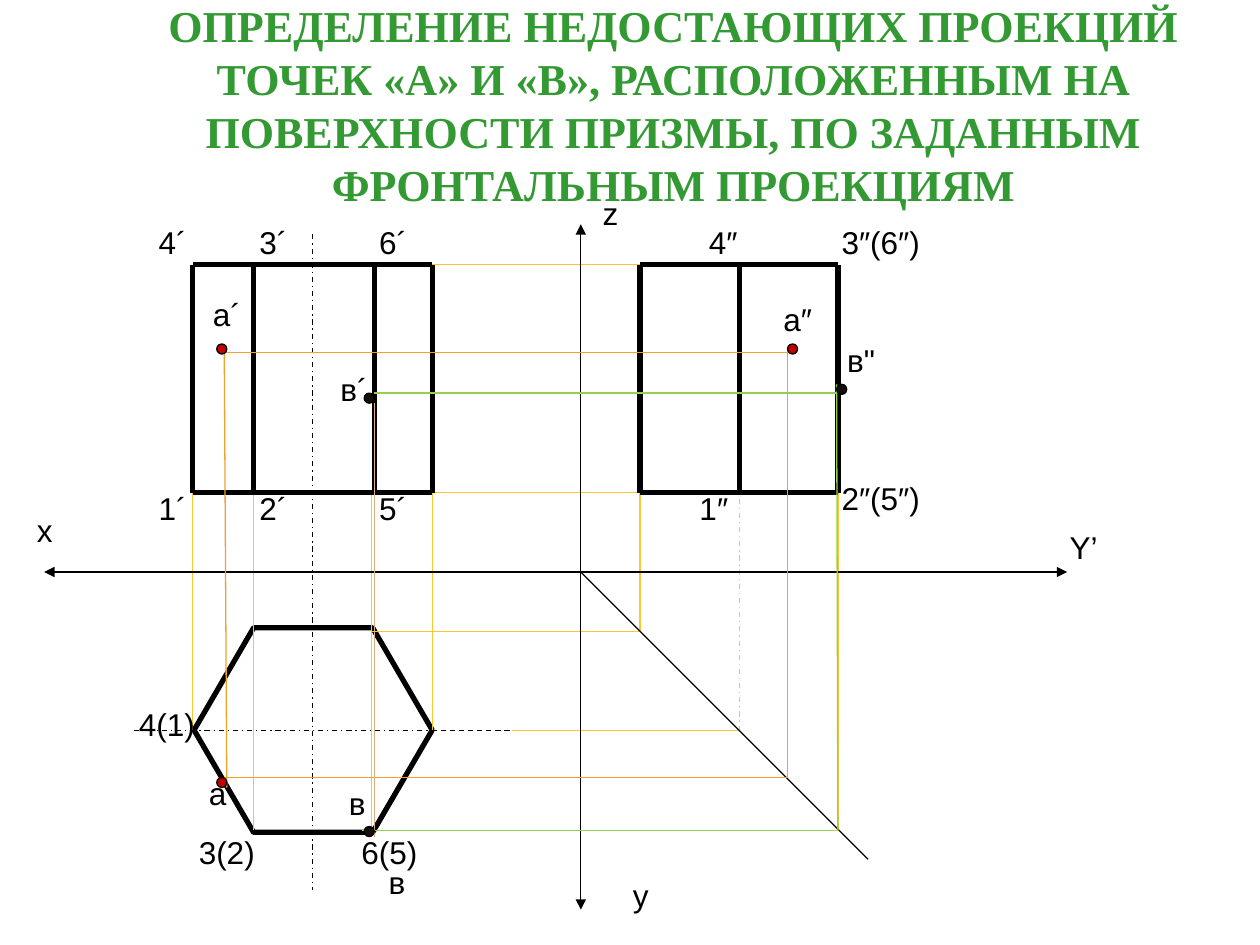
from dataclasses import dataclass

from lxml.etree import SubElement
from pptx import Presentation
from pptx.dml.color import RGBColor
from pptx.enum.dml import MSO_LINE
from pptx.enum.shapes import MSO_CONNECTOR, MSO_SHAPE
from pptx.enum.text import MSO_ANCHOR, MSO_AUTO_SIZE, PP_ALIGN
from pptx.oxml.ns import qn
from pptx.util import Inches, Pt


@dataclass(frozen=True)
class Theme:
    title_font: str = "Times New Roman"
    label_font: str = "Arial"
    title_size: float = 25.2
    label_size: float = 18
    thin: float = 0.75
    thick: float = 3
    title: str = "339933"
    ink: str = "000000"
    link: str = "FFC42F"
    trace_a: str = "F0A22E"
    trace_b: str = "E2AC76"
    trace_b_side: str = "92D050"
    dot_a: str = "C00000"
    dot_b: str = "160F09"


T = Theme()

TITLE = ("ОПРЕДЕЛЕНИЕ НЕДОСТАЮЩИХ ПРОЕКЦИЙ ТОЧЕК «А» И «В», РАСПОЛОЖЕННЫМ НА "
         "ПОВЕРХНОСТИ ПРИЗМЫ, ПО ЗАДАННЫМ ФРОНТАЛЬНЫМ ПРОЕКЦИЯМ")

# Projection grid, in inches
OX, OY = 4.61, 4.54                          # origin of the axes
X1, X2, X_MID, X5, X4 = 1.53, 2.01, 2.48, 2.97, 3.43   # front and top views
S1, S2, S3 = 5.08, 5.87, 6.65                # side view
TOP, BASE = 2.1, 3.91                        # prism height
BACK, CENTRE, FRONT = 5.01, 5.8, 6.59        # depth in the top view
AX, A_SIDE, A_Z, A_Y = 1.78, 6.25, 2.8, 6.17   # point A
B_SIDE, B_Z = 6.64, 3.12                     # point B
HEXAGON = (1.54, 4.98, 1.89, 1.63)
DOT = 0.08

LINKS = [
    (X1, CENTRE, X1, BASE), (X2, FRONT, X2, BASE),
    (2.95, FRONT, 2.95, BASE), (X4, CENTRE, X4, BASE),
    (2.95, BACK, S1, BACK), (S1, BACK, S1, BASE),
    (X4, BASE, S1, BASE), (X4, TOP, S1, TOP),
    (4.06, CENTRE, S2, CENTRE), (2.87, FRONT, S3, FRONT), (S3, FRONT, S3, BASE),
]
EDGES = [(x, BASE, x, TOP) for x in (X1, X2, X5, X4, S1, S2, S3)]
EDGES += [(a, z, b, z) for a, b in ((X1, X4), (S1, S3)) for z in (BASE, TOP)]
AXES = [(0.35, OY, 8.47, OY), (OX, 1.78, OX, 7.22)]
CENTRE_LINES = [(X_MID, 1.86, X_MID, 7.06), (1.06, CENTRE, X4, CENTRE)]
TRACES = {
    T.trace_a: [(AX, A_Z, 1.8, 6.25), (AX, A_Y, A_SIDE, A_Y),
                (AX, A_Z, A_SIDE, A_Z), (A_SIDE, A_Y, A_SIDE, A_Z)],
    T.trace_b: [(X5, 3.2, X5, 6.64)],
    T.trace_b_side: [(2.95, FRONT, 6.62, FRONT), (S3, FRONT, B_SIDE, 3.05),
                     (X5, B_Z, B_SIDE, B_Z)],
}
DOTS = {
    T.dot_a: [(1.72, 2.73), (1.72, 6.17), (6.25, 2.73)],
    T.dot_b: [(2.89, 3.12), (2.89, 6.56), (6.64, 3.05)],
}
# top of the row: (text, left, width)
LABELS = {
    1.49: [("z", 4.68, 0.33)],
    1.72: [("4´", 1.02, 0.7), ("3´", 1.92, 0.5), ("6´", 2.73, 0.78),
           ("4″", 5.35, 0.78), ("3″(6″)", 6.56, 0.86)],
    2.29: [("а´", 1.41, 0.78)],
    2.33: [("а″", 6.02, 0.62)],
    2.66: [("в\"", 6.56, 0.55)],
    2.89: [("в´", 2.42, 0.78)],
    3.75: [("2″(5″)", 6.48, 1.02)],
    3.83: [("1´", 0.94, 0.86), ("2´", 1.76, 0.82), ("5´", 2.81, 0.62),
           ("1″", 5.39, 0.55)],
    4.01: [("x", 0.19, 0.33)],
    4.14: [("Y’", 8.39, 0.42)],
    5.55: [("4(1)", 0.7, 1.25)],
    6.09: [("а", 1.56, 0.26)],
    6.17: [("в", 2.66, 0.35)],
    6.56: [("3(2)", 1.41, 0.78), ("6(5)", 2.66, 0.86)],
    6.8: [("в", 2.98, 0.34)],
    6.9: [("y", 4.92, 0.33)],
}


def inches(values):
    return [Inches(v) for v in values]


def style_line(line, color, width):
    line.color.rgb = RGBColor.from_string(color)
    line.width = Pt(width)


def add_lines(slide, segments, color=T.ink, width=T.thin, dash=None, arrows=False):
    for segment in segments:
        c = slide.shapes.add_connector(MSO_CONNECTOR.STRAIGHT, *inches(segment))
        style_line(c.line, color, width)
        if dash:
            c.line.dash_style = dash
        if arrows:
            for end in ("a:headEnd", "a:tailEnd"):
                SubElement(c.line._get_or_add_ln(), qn(end), type="triangle")
        SubElement(c._element.spPr, qn("a:effectLst"))


def add_outline(slide, kind, box, fill=None, width=T.thin):
    sp = slide.shapes.add_shape(kind, *inches(box))
    sp.shadow.inherit = False
    if fill:
        sp.fill.solid()
        sp.fill.fore_color.rgb = RGBColor.from_string(fill)
    else:
        sp.fill.background()
    style_line(sp.line, T.ink, width)
    return sp


def write(tf, text, font, size, color, bold=False):
    tf.text = text
    p = tf.paragraphs[0]
    p.alignment = PP_ALIGN.CENTER
    f = p.runs[0].font
    f.name, f.size, f.bold = font, Pt(size), bold
    f.color.rgb = RGBColor.from_string(color)


def add_title(slide):
    sp = slide.shapes.title
    sp.left, sp.top, sp.width, sp.height = inches((0.69, 0.21, 9.31, 1.24))
    tf = sp.text_frame
    tf.word_wrap = True
    tf.auto_size = MSO_AUTO_SIZE.NONE
    tf.vertical_anchor = MSO_ANCHOR.MIDDLE
    write(tf, TITLE, T.title_font, T.title_size, T.title, bold=True)


def add_label(slide, text, left, top, width):
    tf = slide.shapes.add_textbox(*inches((left, top, width, 0.4))).text_frame
    tf.word_wrap = False
    write(tf, text, T.label_font, T.label_size, T.ink)


def main():
    prs = Presentation()
    prs.slide_width, prs.slide_height = inches((10, 7.5))
    slide = prs.slides.add_slide(prs.slide_layouts[5])
    add_title(slide)

    hexagon = add_outline(slide, MSO_SHAPE.HEXAGON, HEXAGON, width=T.thick)
    hexagon.adjustments[0] = 0.29
    hexagon.adjustments[1] = 1.15

    add_lines(slide, LINKS, T.link)
    add_lines(slide, [(S2, CENTRE, S2, BASE)], T.link, dash=MSO_LINE.DASH_DOT)
    add_lines(slide, EDGES, width=T.thick)
    add_lines(slide, AXES, arrows=True)
    add_lines(slide, CENTRE_LINES, dash=MSO_LINE.DASH_DOT)
    add_lines(slide, [(X4, CENTRE, 4.06, CENTRE)], dash=MSO_LINE.DASH)
    add_lines(slide, [(OX, OY, 6.89, 6.82)])
    for color, segments in TRACES.items():
        add_lines(slide, segments, color)

    for color, places in DOTS.items():
        for left, top in places:
            add_outline(slide, MSO_SHAPE.FLOWCHART_CONNECTOR,
                        (left, top, DOT, DOT), color)
    for top, row in LABELS.items():
        for text, left, width in row:
            add_label(slide, text, left, top, width)
    prs.save("out.pptx")


if __name__ == "__main__":
    main()
